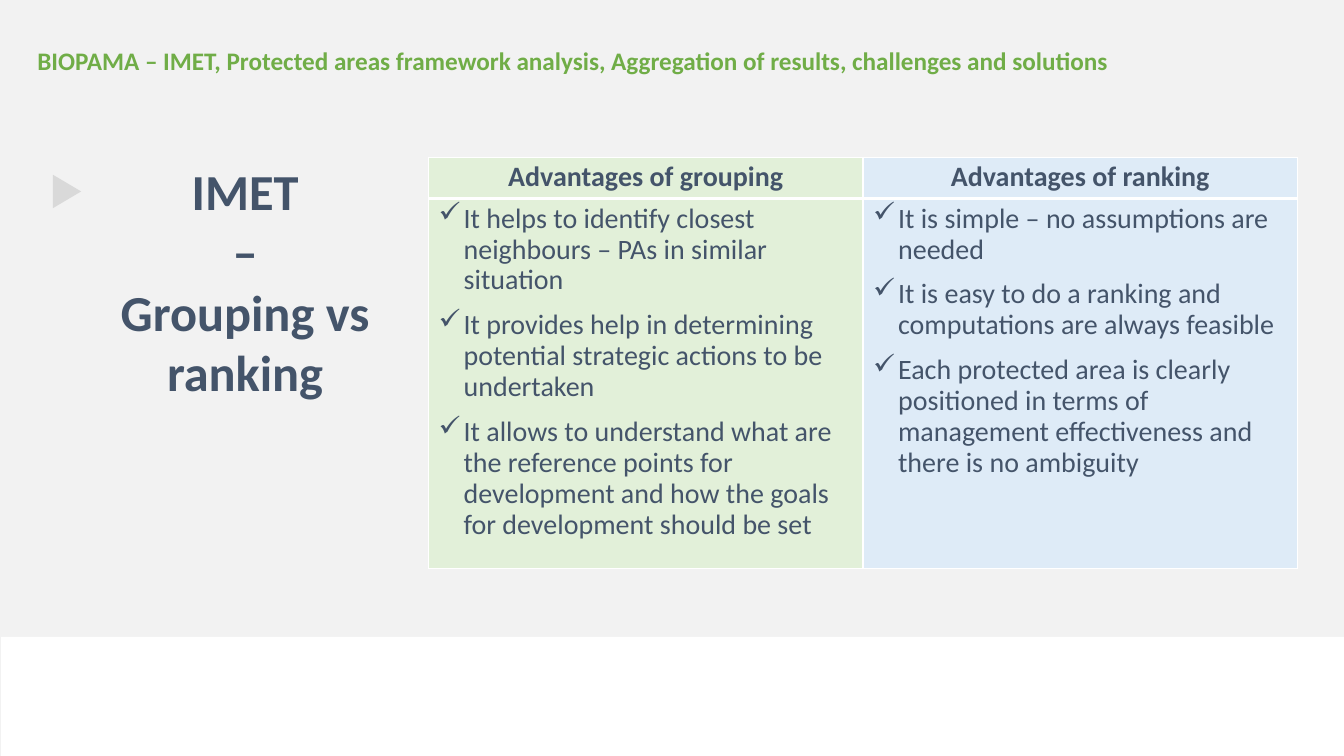
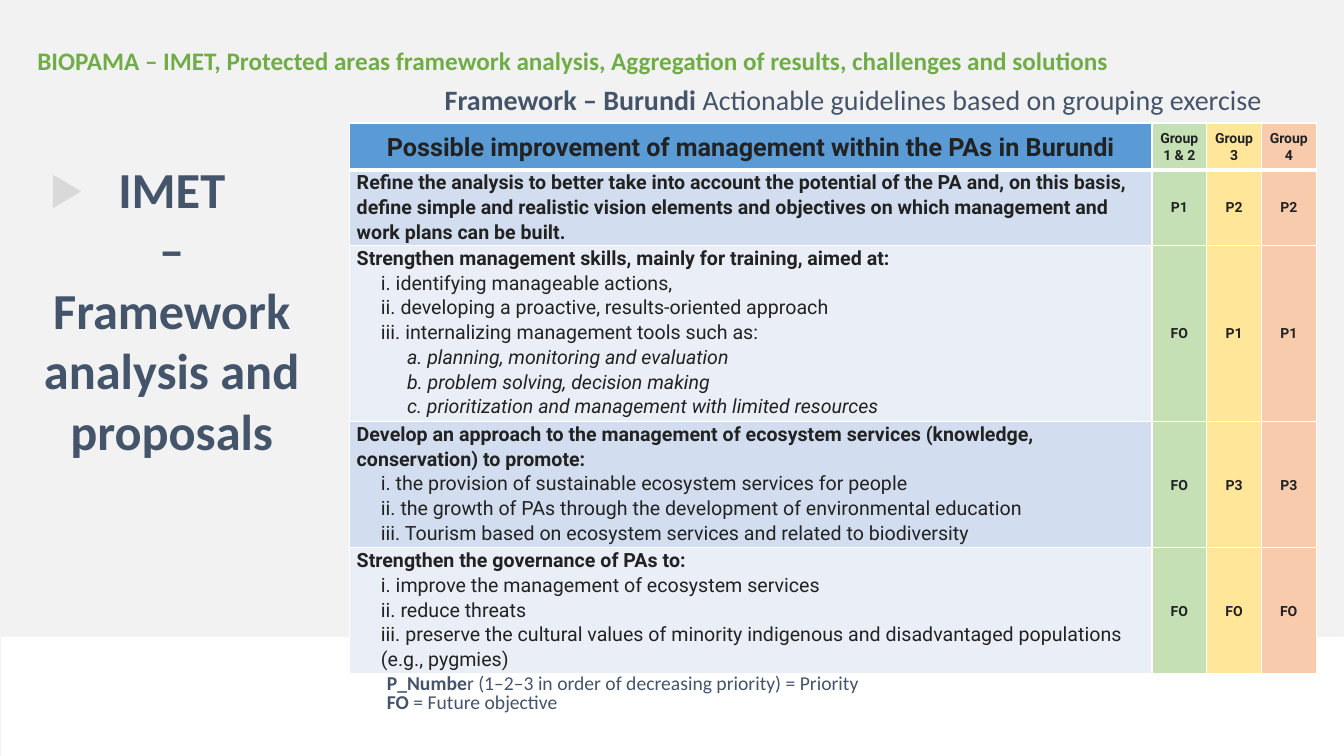
from lxml import etree
from pptx import Presentation
from pptx.dml.color import RGBColor
from pptx.enum.shapes import MSO_SHAPE
from pptx.enum.text import MSO_ANCHOR, MSO_AUTO_SIZE, PP_ALIGN
from pptx.oxml.ns import qn
from pptx.util import Cm, Pt

CENTER = PP_ALIGN.CENTER
MIDDLE = MSO_ANCHOR.MIDDLE
GROW = MSO_AUTO_SIZE.SHAPE_TO_FIT_TEXT
RECTANGLE = MSO_SHAPE.RECTANGLE
TRIANGLE = MSO_SHAPE.ISOSCELES_TRIANGLE

WHITE = RGBColor(0xFF, 0xFF, 0xFF)
PAGE_GREY = RGBColor(0xF2, 0xF2, 0xF2)
MARKER_GREY = RGBColor(0xD9, 0xD9, 0xD9)
SLATE = RGBColor(0x44, 0x54, 0x6A)
GREEN = RGBColor(0x70, 0xAD, 0x47)
INK = RGBColor(0x22, 0x22, 0x22)
PALE_GREEN = RGBColor(0xE2, 0xF0, 0xD9)
PALE_BLUE = RGBColor(0xDE, 0xEB, 0xF7)
HEADER_BLUE = RGBColor(0x5B, 0x9B, 0xD5)
BAND_COLORS = (RGBColor(0xD2, 0xDE, 0xEF), RGBColor(0xEA, 0xEF, 0xF7))
GROUP_COLORS = (
    RGBColor(0xC5, 0xE0, 0xB4),
    RGBColor(0xFF, 0xE6, 0x99),
    RGBColor(0xF8, 0xCB, 0xAD),
)

SLIDE_WIDTH, SLIDE_HEIGHT = 33.87, 19.05
BAND_TOP = 16.05
RUNNING_HEAD = (
    "BIOPAMA – IMET, Protected areas framework analysis, "
    "Aggregation of results, challenges and solutions"
)

ADVANTAGES = (
    ("Advantages of grouping", PALE_GREEN, (
        "It helps to identify closest neighbours – PAs in similar situation",
        "It provides help in determining potential strategic actions to be undertaken",
        "It allows to understand what are the reference points for development "
        "and how the goals for development should be set",
    )),
    ("Advantages of ranking", PALE_BLUE, (
        "It is simple – no assumptions are needed",
        "It is easy to do a ranking and computations are always feasible",
        "Each protected area is clearly positioned in terms of management "
        "effectiveness and there is no ambiguity",
    )),
)

GUIDELINE_HEADINGS = (
    "Possible improvement of management within the PAs in Burundi",
    "Group 1 & 2", "Group 3", "Group 4",
)
# Each guideline: row height, (outline level, text) lines, priority per group
GUIDELINES = (
    (1.88, (
        (0, "Refine the analysis to better take into account the potential of the PA "
            "and, on this basis, define simple and realistic vision elements and "
            "objectives on which management and work plans can be built."),
    ), ("P1", "P2", "P2")),
    (4.44, (
        (0, "Strengthen management skills, mainly for training, aimed at:"),
        (1, "i. identifying manageable actions,"),
        (1, "ii. developing a proactive, results-oriented approach"),
        (1, "iii. internalizing management tools such as:"),
        (2, "a. planning, monitoring and evaluation"),
        (2, "b. problem solving, decision making"),
        (2, "c. prioritization and management with limited resources"),
    ), ("FO", "P1", "P1")),
    (3.18, (
        (0, "Develop an approach to the management of ecosystem services "
            "(knowledge, conservation) to promote:"),
        (1, "i. the provision of sustainable ecosystem services for people"),
        (1, "ii. the growth of PAs through the development of environmental education"),
        (1, "iii. Tourism based on ecosystem services and related to biodiversity"),
    ), ("FO", "P3", "P3")),
    (3.18, (
        (0, "Strengthen the governance of PAs to:"),
        (1, "i. improve the management of ecosystem services"),
        (1, "ii. reduce threats"),
        (1, "iii. preserve the cultural values of minority indigenous and "
            "disadvantaged populations (e.g., pygmies)"),
    ), ("FO", "FO", "FO")),
)
OUTLINE_STYLES = (
    {"bold": True},
    {"indent": 0.61},
    {"indent": 1.27, "italic": True},
)


def write(text_frame, text, *, bold_lead="", size=18, font="Calibri", color=SLATE,
          bold=False, italic=False, align=None, line_spacing=1.0, space_before=0,
          indent=0, bullet=None):
    """Add one paragraph, reusing the empty first one; bold_lead precedes text."""
    paragraph = text_frame.paragraphs[0]
    if paragraph.runs:
        paragraph = text_frame.add_paragraph()
        paragraph.space_before = Pt(space_before)
    paragraph.alignment = align
    paragraph.line_spacing = line_spacing
    if indent:
        properties = paragraph._p.get_or_add_pPr()
        properties.set("marL", str(Cm(indent)))
        properties.set("indent", str(-Cm(indent) if bullet else 0))
        if bullet:
            etree.SubElement(properties, qn("a:buChar"), char=bullet)
    for run_text, run_bold in ((bold_lead, True), (text, bold)):
        if run_text:
            run = paragraph.add_run()
            run.text = run_text
            run.font.name = font
            run.font.size = Pt(size)
            run.font.bold = run_bold
            run.font.italic = italic
            run.font.color.rgb = color


def add_text_frame(slide, left, top, width, height, auto_size=None):
    box = slide.shapes.add_textbox(Cm(left), Cm(top), Cm(width), Cm(height))
    text_frame = box.text_frame
    text_frame.word_wrap = True
    if auto_size is not None:
        text_frame.auto_size = auto_size
    return text_frame


def add_plain_shape(slide, kind, left, top, width, height, color):
    shape = slide.shapes.add_shape(kind, Cm(left), Cm(top), Cm(width), Cm(height))
    shape.shadow.inherit = False
    shape.fill.solid()
    shape.fill.fore_color.rgb = color
    shape.line.fill.background()
    return shape


def add_base_slide(presentation):
    """Add a slide with the shared background, band, marker and running head."""
    slide = presentation.slides.add_slide(presentation.slide_layouts[6])
    background = slide.background.fill
    background.solid()
    background.fore_color.rgb = PAGE_GREY
    add_plain_shape(slide, RECTANGLE, 0.03, BAND_TOP, SLIDE_WIDTH - 0.03,
                    SLIDE_HEIGHT - BAND_TOP, WHITE)
    marker = add_plain_shape(slide, TRIANGLE, 1.27, 4.47, 0.84, 0.71, MARKER_GREY)
    marker.rotation = 90
    write(add_text_frame(slide, 0.69, 1.02, 31.98, 1.02, GROW), RUNNING_HEAD,
          color=GREEN, bold=True)
    return slide


def add_side_title(slide, left, top, height, lines):
    text_frame = add_text_frame(slide, left, top, 8.66, height, GROW)
    for line in lines:
        write(text_frame, line, size=36, bold=True, align=CENTER)


def set_borders(cell, top, bottom):
    """Draw white borders, 1 pt at the sides."""
    properties = cell._tc.get_or_add_tcPr()
    for tag, width in (("lnL", 1), ("lnR", 1), ("lnT", top), ("lnB", bottom)):
        line = etree.SubElement(properties, qn(f"a:{tag}"), w=str(Pt(width)))
        fill = etree.SubElement(line, qn("a:solidFill"))
        etree.SubElement(fill, qn("a:srgbClr"), val=str(WHITE))


def add_grid(slide, left, top, widths, heights):
    """Add an unbanded table with white rules, heavier below the header row."""
    frame = slide.shapes.add_table(len(heights), len(widths), Cm(left), Cm(top),
                                   Cm(sum(widths)), Cm(sum(heights)))
    table = frame.table
    table.horz_banding = False
    for column, width in zip(table.columns, widths):
        column.width = Cm(width)
    for index, (row, height) in enumerate(zip(table.rows, heights)):
        row.height = Cm(height)
        for cell in row.cells:
            set_borders(cell, top=3 if index == 1 else 1, bottom=3 if index == 0 else 1)
    return table


def fill_cell(cell, color):
    cell.fill.solid()
    cell.fill.fore_color.rgb = color
    return cell.text_frame


def fill_compact_cell(cell, color, lines, anchor=MIDDLE, **text_format):
    """Fill a tight cell with (extra format, text) lines."""
    text_frame = fill_cell(cell, color)
    cell.margin_left = cell.margin_right = Cm(0.18)
    cell.margin_top = cell.margin_bottom = 0
    cell.vertical_anchor = anchor
    for extra_format, text in lines:
        write(text_frame, text, font="Roboto", color=INK, line_spacing=1.07,
              **text_format, **extra_format)


def build_comparison_slide(presentation):
    slide = add_base_slide(presentation)
    add_side_title(slide, 1.85, 3.91, 6.4, ("IMET", "–", "Grouping vs ranking"))
    table = add_grid(slide, 10.8, 3.96, (10.95, 10.95), (1.04, 9.32))
    for column, (heading, color, points) in enumerate(ADVANTAGES):
        write(fill_cell(table.cell(0, column), color), heading, size=20, bold=True,
              align=CENTER, line_spacing=0.9)
        text_frame = fill_cell(table.cell(1, column), color)
        for point in points:
            write(text_frame, point, size=20, line_spacing=0.9, space_before=10,
                  indent=0.63, bullet="✓")


def build_guidelines_slide(presentation):
    slide = add_base_slide(presentation)
    add_side_title(slide, 0, 3.86, 7.95,
                   ("IMET", "–", "Framework analysis and proposals"))
    write(add_text_frame(slide, 9.14, 2.06, 24.73, 1.07),
          "Actionable guidelines based on grouping exercise",
          bold_lead="Framework – Burundi ", size=20, align=CENTER, line_spacing=0.9)

    heights = [1.18] + [height for height, _, _ in GUIDELINES]
    table = add_grid(slide, 8.81, 3.1, (20.22, 1.38, 1.38, 1.38), heights)
    header_colors = (HEADER_BLUE, *GROUP_COLORS)
    for column, (heading, color) in enumerate(zip(GUIDELINE_HEADINGS, header_colors)):
        fill_compact_cell(table.cell(0, column), color, [({"bold": True}, heading)],
                          size=10 if column else 18, align=CENTER)
    for row, (_, outline, priorities) in enumerate(GUIDELINES, start=1):
        lines = [(OUTLINE_STYLES[level], text) for level, text in outline]
        fill_compact_cell(table.cell(row, 0), BAND_COLORS[(row - 1) % 2], lines,
                          anchor=MSO_ANCHOR.TOP, size=14)
        for column, (priority, color) in enumerate(zip(priorities, GROUP_COLORS), 1):
            fill_compact_cell(table.cell(row, column), color,
                              [({"bold": True}, priority)], size=10, align=CENTER)

    legend = add_text_frame(slide, 9.5, 16.9, 12.95, 1.2)
    for code, meaning in (
        ("P_Numbe", "r (1–2–3 in order of decreasing priority) = Priority"),
        ("FO", " = Future objective"),
    ):
        write(legend, meaning, bold_lead=code, size=14, line_spacing=0.8)


def main():
    presentation = Presentation()
    presentation.slide_width = Cm(SLIDE_WIDTH)
    presentation.slide_height = Cm(SLIDE_HEIGHT)
    build_comparison_slide(presentation)
    build_guidelines_slide(presentation)
    presentation.save("out.pptx")


if __name__ == "__main__":
    main()
